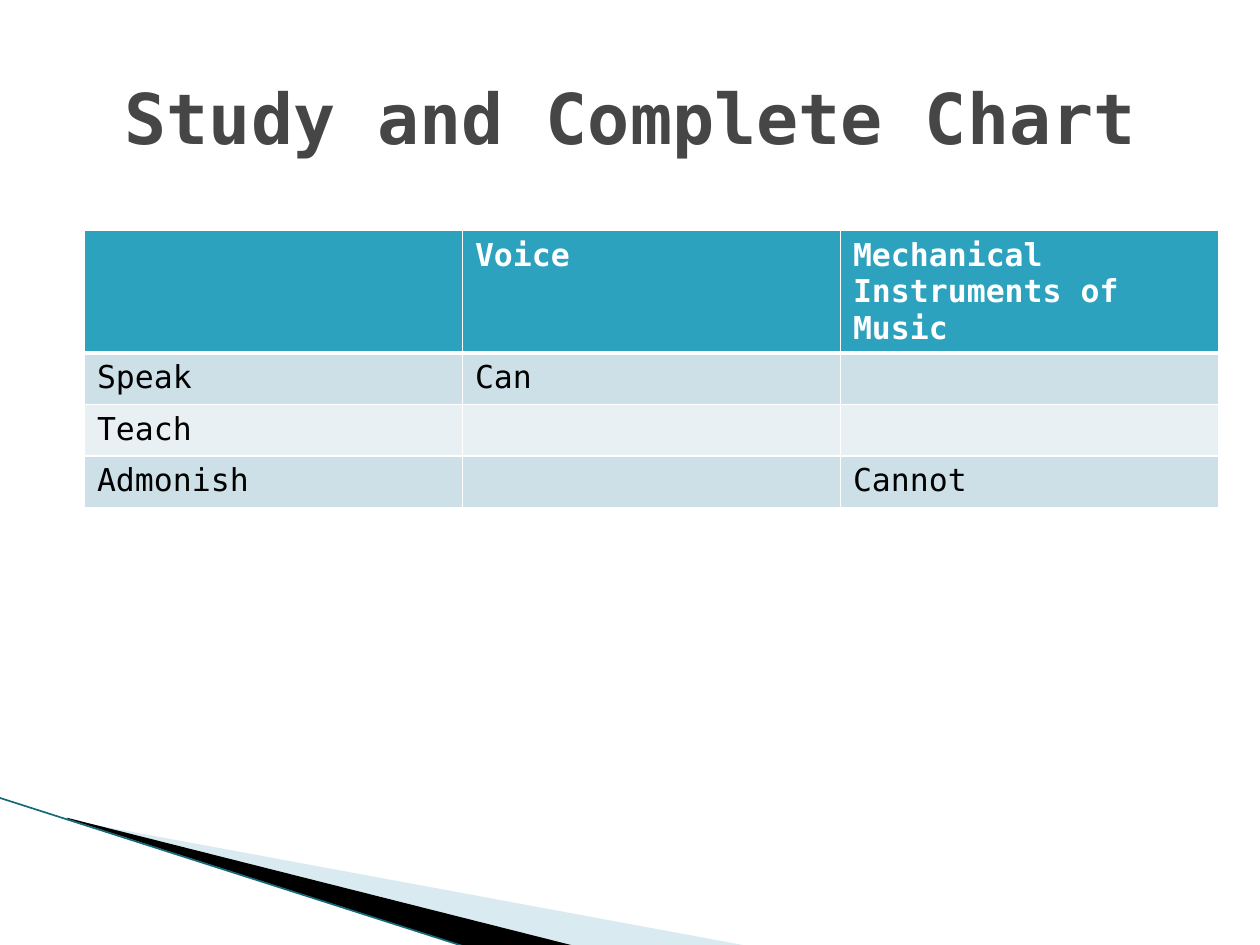
from lxml import etree
from pptx import Presentation
from pptx.dml.color import RGBColor
from pptx.enum.shapes import MSO_CONNECTOR as Connector
from pptx.enum.text import MSO_ANCHOR as Anchor, PP_ALIGN as Align
from pptx.oxml.ns import qn
from pptx.util import Inches, Pt

FONT = "DejaVu Sans Mono"
HEADER_FILL = "2DA2BF"
BAND_FILLS = ["CDE0E8", "E8F0F4"]
ROWS = [
    ["", "Voice", "Mechanical Instruments of Music"],
    ["Speak", "Can", ""],
    ["Teach", "", ""],
    ["Admonish", "", "Cannot"],
]
ROW_HEIGHTS = [0.83, 0.41, 0.41, 0.41]
COLUMN_WIDTH = 3


def rgb(color):
    return RGBColor.from_string(color)


def set_fill(target, color):
    target.fill.solid()
    target.fill.fore_color.rgb = rgb(color)


def format_text(paragraph, color, **values):
    font = paragraph.font
    for name, value in {"name": FONT, **values}.items():
        setattr(font, name, value)
    font.color.rgb = rgb(color)


def add_wedge(slide, points, color, alpha=None):
    """Add a filled polygon; alpha is its opacity in percent."""
    start, *others = [(Inches(x), Inches(y)) for x, y in points]
    builder = slide.shapes.build_freeform(*start)
    builder.add_line_segments(others, close=True)
    shape = builder.convert_to_shape()
    shape.shadow.inherit = False
    set_fill(shape, color)
    shape.line.fill.background()
    if alpha is not None:
        color_element = shape.fill._xPr.find(qn("a:solidFill"))[0]
        etree.SubElement(color_element, qn("a:alpha"), val=str(alpha * 1000))


def add_line(slide, start, end, color, width):
    ends = [Inches(value) for value in (*start, *end)]
    line = slide.shapes.add_connector(Connector.STRAIGHT, *ends)
    line.line.color.rgb = rgb(color)
    line.line.width = Pt(width)
    etree.SubElement(line._element.spPr, qn("a:effectLst"))


def add_title(slide, text):
    box = slide.shapes.add_textbox(Inches(0.5), Inches(0.3), Inches(9), Inches(1.25))
    frame = box.text_frame
    frame.word_wrap = True
    frame.vertical_anchor = Anchor.MIDDLE
    paragraph = frame.paragraphs[0]
    paragraph.text = text
    paragraph.alignment = Align.CENTER
    format_text(paragraph, "464646", size=Pt(40), bold=True)


def set_borders(cell, widths):
    """Draw white borders; widths maps each side (L, R, T, B) to points."""
    properties = cell._tc.get_or_add_tcPr()
    for index, (side, width) in enumerate(widths.items()):
        border = etree.Element(qn(f"a:ln{side}"), w=str(Pt(width)))
        fill = etree.SubElement(border, qn("a:solidFill"))
        etree.SubElement(fill, qn("a:srgbClr"), val="FFFFFF")
        properties.insert(index, border)


def add_study_table(slide):
    columns = len(ROWS[0])
    table = slide.shapes.add_table(
        len(ROWS), columns, Inches(0.67), Inches(1.83),
        Inches(COLUMN_WIDTH * columns), Inches(sum(ROW_HEIGHTS)),
    ).table
    for column in table.columns:
        column.width = Inches(COLUMN_WIDTH)
    for i, texts in enumerate(ROWS):
        table.rows[i].height = Inches(ROW_HEIGHTS[i])
        header = i == 0
        for j, text in enumerate(texts):
            cell = table.cell(i, j)
            cell.text = text
            format_text(cell.text_frame.paragraphs[0],
                        "FFFFFF" if header else "000000", size=Pt(18), bold=header)
            set_fill(cell, HEADER_FILL if header else BAND_FILLS[(i - 1) % 2])
            set_borders(cell, {"L": 1, "R": 1, "T": 3 if i == 1 else 1,
                               "B": 3 if header else 1})


def main():
    presentation = Presentation()
    presentation.slide_width = Inches(10)
    presentation.slide_height = Inches(7.5)
    slide = presentation.slides.add_slide(presentation.slide_layouts[6])
    set_fill(slide.background, "FFFFFF")
    add_wedge(slide, [(0.55, 6.51), (5.95, 7.51), (4.56, 7.51), (0.55, 6.5)], "A0CBDC", 40)
    add_wedge(slide, [(0.53, 6.49), (4.57, 7.51), (3.72, 7.52), (0.54, 6.5)], "000000")
    add_line(slide, (-0.01, 6.33), (3.71, 7.52), "16697A", 0.95)
    add_study_table(slide)
    add_title(slide, "Study and Complete Chart")
    presentation.save("out.pptx")


if __name__ == "__main__":
    main()
